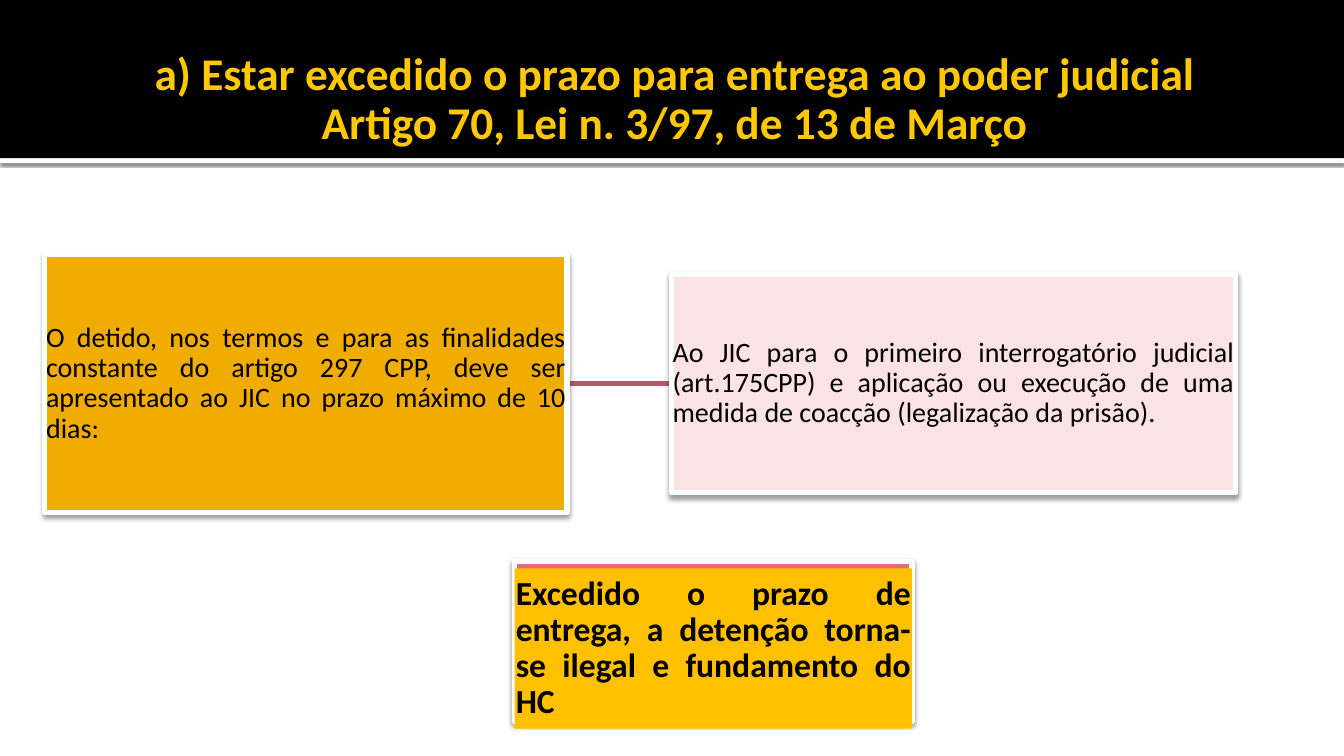
from lxml import etree
from pptx import Presentation
from pptx.dml.color import RGBColor
from pptx.enum.shapes import MSO_CONNECTOR, MSO_SHAPE
from pptx.enum.text import MSO_ANCHOR, PP_ALIGN
from pptx.oxml.ns import qn
from pptx.util import Pt

RECTANGLE = MSO_SHAPE.RECTANGLE
STRAIGHT = MSO_CONNECTOR.STRAIGHT
MIDDLE = MSO_ANCHOR.MIDDLE
CENTER = PP_ALIGN.CENTER
JUSTIFY = PP_ALIGN.JUSTIFY

BLACK = RGBColor(0x00, 0x00, 0x00)
WHITE = RGBColor(0xFF, 0xFF, 0xFF)
YELLOW = RGBColor(0xFF, 0xC8, 0x00)
AMBER = RGBColor(0xF0, 0xAD, 0x00)
GOLD = RGBColor(0xFF, 0xC0, 0x00)
PALE_PINK = RGBColor(0xFA, 0xE2, 0xE5)
PINK = RGBColor(0xE6, 0x6C, 0x7D)
DARK_PINK = RGBColor(0xB8, 0x56, 0x64)

BORDER = 3.8
CARD_SHADOW = (38, 3.5, 2)
STRIP_SHADOW = (60, 2.5, 0.8)


class SlideBuilder:
    """Draws styled elements, measured in points, on the current slide."""

    font_name = "Calibri"
    line_spacing = 0.9

    def __init__(self, page):
        self.page = page

    def set_text(self, shape, text, size, color=BLACK, bold=False, align=JUSTIFY, inset=0.9):
        frame = shape.text_frame
        frame.word_wrap = True
        frame.vertical_anchor = MIDDLE
        frame.margin_left = frame.margin_right = Pt(inset)
        frame.margin_top = frame.margin_bottom = Pt(inset)
        para = frame.paragraphs[0]
        para.text = text
        para.alignment = align
        para.line_spacing = self.line_spacing
        para.font.name = self.font_name
        para.font.size = Pt(size)
        para.font.bold = bold
        para.font.color.rgb = color

    def cast_shadow(self, shape, opacity, blur, distance):
        effects = shape._element.spPr.find(qn("a:effectLst"))
        shadow = etree.SubElement(
            effects, qn("a:outerShdw"), blurRad=str(Pt(blur)),
            dist=str(Pt(distance)), dir="5400000", rotWithShape="0")
        color = etree.SubElement(shadow, qn("a:srgbClr"), val=str(BLACK))
        etree.SubElement(color, qn("a:alpha"), val=str(opacity * 1000))

    def box(self, left, top, width, height, fill, shadow=None, border=False):
        shape = self.page.shapes.add_shape(
            RECTANGLE, Pt(left), Pt(top), Pt(width), Pt(height))
        shape.fill.solid()
        shape.fill.fore_color.rgb = fill
        shape.shadow.inherit = False
        if shadow:
            self.cast_shadow(shape, *shadow)
        if border:
            shape.line.color.rgb = WHITE
            shape.line.width = Pt(BORDER)
        else:
            shape.line.fill.background()
        return shape

    def card(self, left, top, width, height, fill):
        return self.box(left, top, width, height, fill, CARD_SHADOW, border=True)

    def title(self, left, top, width, height, text):
        box = self.page.shapes.add_textbox(Pt(left), Pt(top), Pt(width), Pt(height))
        self.set_text(box, text, 32.4, YELLOW, bold=True, align=CENTER, inset=3.6)

    def link(self, left, right, y):
        line = self.page.shapes.add_connector(STRAIGHT, Pt(left), Pt(y), Pt(right), Pt(y))
        line.line.color.rgb = DARK_PINK
        line.line.width = Pt(BORDER)
        etree.SubElement(line._element.spPr, qn("a:effectLst"))
        return line


def main():
    deck = Presentation()
    deck.slide_width, deck.slide_height = Pt(960), Pt(540)
    builder = SlideBuilder(deck.slides.add_slide(deck.slide_layouts[6]))

    builder.box(0, 113, 960, 3.6, WHITE, STRIP_SHADOW)
    builder.box(0, 0, 960, 113, BLACK)
    builder.title(50, 22, 864, 99,
                  "a) Estar excedido o prazo para entrega ao poder judicial\v"
                  "Artigo 70, Lei n. 3/97, de 13 de Março")

    link = builder.link(405, 479.5, 274)
    deadline = builder.card(32, 182, 373, 184, AMBER)
    builder.set_text(deadline, "O detido, nos termos e para as finalidades constante do artigo "
                     "297 CPP, deve ser apresentado ao JIC no prazo máximo de 10 dias:", 20)
    judge = builder.card(479.5, 196, 403, 156, PALE_PINK)
    builder.set_text(judge, "Ao JIC para o primeiro interrogatório judicial (art.175CPP) e "
                     "aplicação ou execução de uma medida de coacção (legalização da prisão).", 20)
    link.begin_connect(deadline, 3)
    link.end_connect(judge, 1)

    builder.card(367.5, 401, 284, 114.5, PINK)
    outcome = builder.box(367.5, 406, 284, 114.5, GOLD)
    builder.set_text(outcome, "Excedido o prazo de entrega, a detenção torna-se ilegal e "
                     "fundamento do HC", 24, bold=True)

    deck.save("out.pptx")


if __name__ == "__main__":
    main()
